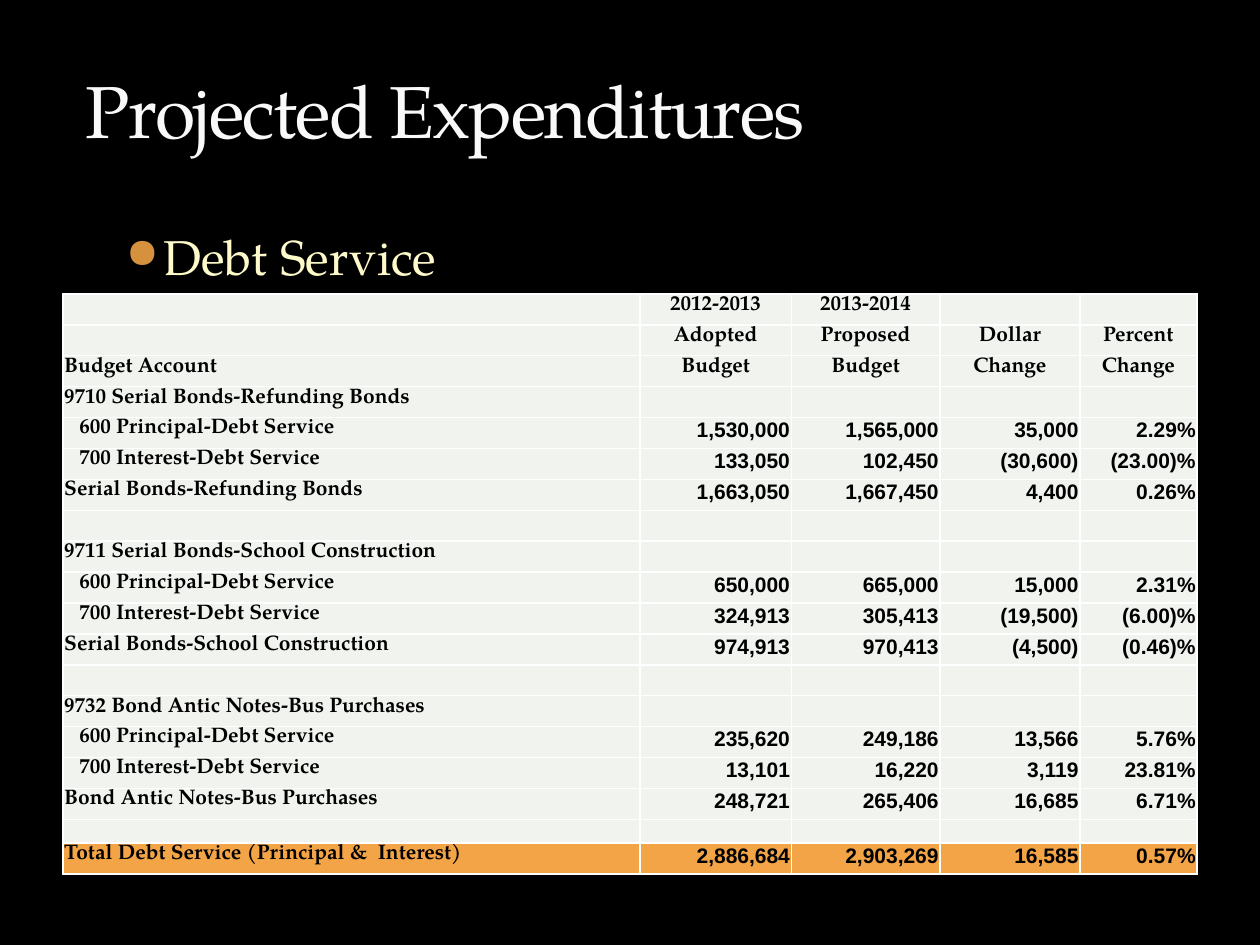
from lxml import etree
from pptx import Presentation
from pptx import util as u
from pptx.dml.color import RGBColor
from pptx.enum import text
from pptx.oxml import ns

WIDTH, HEIGHT = u.Inches(10), u.Inches(7.5)
SERIF, SANS = "TeX Gyre Pagella", "Arial"
COLORS = {
    "background": "000000", "title": "F9F9F9", "heading": "FEFAC9",
    "bullet": "D6913F", "cell": "F0F3EE", "total": "F3A447",
    "border": "FFFFFF", "ink": "000000",
}
LEFT, CENTER, RIGHT = (text.PP_ALIGN.LEFT, text.PP_ALIGN.CENTER,
                       text.PP_ALIGN.RIGHT)

COLUMN_WIDTHS = [4.58, 1.2, 1.18, 1.11, 0.93]
TABLE_HEIGHT, SPACER_HEIGHT = 4.61, 0.19
PRINCIPAL, INTEREST = "600 Principal-Debt Service", "700 Interest-Debt Service"

HEADER = [
    ["", "2012-2013", "2013-2014", "", ""],
    ["", "Adopted", "Proposed", "Dollar", "Percent"],
    ["Budget Account", "Budget", "Budget", "Change", "Change"],
]
# Account code, account name, then principal, interest and subtotal figures
ACCOUNTS = [
    ("9710", "Serial Bonds-Refunding Bonds",
     ["1,530,000", "1,565,000", "35,000", "2.29%"],
     ["133,050", "102,450", "(30,600)", "(23.00)%"],
     ["1,663,050", "1,667,450", "4,400", "0.26%"]),
    ("9711", "Serial Bonds-School Construction",
     ["650,000", "665,000", "15,000", "2.31%"],
     ["324,913", "305,413", "(19,500)", "(6.00)%"],
     ["974,913", "970,413", "(4,500)", "(0.46)%"]),
    ("9732", "Bond Antic Notes-Bus Purchases",
     ["235,620", "249,186", "13,566", "5.76%"],
     ["13,101", "16,220", "3,119", "23.81%"],
     ["248,721", "265,406", "16,685", "6.71%"]),
]
TOTAL = ["Total Debt Service (Principal &  Interest)",
         "2,886,684", "2,903,269", "16,585", "0.57%"]


def rgb(name):
    return RGBColor.from_string(COLORS[name])


def add_child(parent, tag, **attributes):
    child = etree.SubElement(parent, ns.qn(tag))
    for key, value in attributes.items():
        child.set(key, str(value))
    return child


def write(paragraph, words, size=12, font=SERIF, color="ink", bold=False,
          align=LEFT, spacing=0, indent=0, hanging=0):
    """Put formatted words in a paragraph; indents are in inches."""
    paragraph.alignment = align
    properties = paragraph._p.get_or_add_pPr()
    properties.set("marL", str(u.Inches(indent)))
    properties.set("indent", str(-u.Inches(hanging)))
    run = paragraph.add_run()
    run.text = words
    run.font.size, run.font.name, run.font.bold = u.Pt(size), font, bold
    run.font.color.rgb = rgb(color)
    if spacing:
        run._r.get_or_add_rPr().set("spc", str(spacing * 100))


def add_bullet(paragraph, character, color, percent):
    properties = paragraph._p.get_or_add_pPr()
    add_child(add_child(properties, "a:buClr"), "a:srgbClr", val=COLORS[color])
    add_child(properties, "a:buSzPct", val=percent * 1000)
    add_child(properties, "a:buChar", char=character)


def add_text_box(slide, left, top, width, height, anchor):
    """Add a wrapping box placed by shares of the slide's size."""
    shape = slide.shapes.add_textbox(
        int(WIDTH * left), int(HEIGHT * top),
        int(WIDTH * width), int(HEIGHT * height))
    shape.text_frame.word_wrap = True
    shape.text_frame.vertical_anchor = anchor
    return shape.text_frame.paragraphs[0]


def format_cell(cell, fill):
    cell.margin_left = cell.margin_right = cell.margin_top = u.Inches(0.01)
    cell.margin_bottom = 0
    properties = cell._tc.get_or_add_tcPr()
    for side in ("a:lnL", "a:lnR", "a:lnT", "a:lnB"):
        line = add_child(properties, side, w=u.Pt(1))
        add_child(add_child(line, "a:solidFill"), "a:srgbClr",
                  val=COLORS["border"])
    cell.fill.solid()
    cell.fill.fore_color.rgb = rgb(fill)


def fill_cell(cell, words, **style):
    paragraph = cell.text_frame.paragraphs[0]
    if words:
        write(paragraph, words, bold=True, **style)
    else:
        # A small end mark keeps empty rows from growing
        add_child(paragraph._p, "a:endParaRPr", sz=800)


def table_rows():
    blank = [""] * 4
    rows = list(HEADER)
    for code, name, principal, interest, subtotal in ACCOUNTS:
        rows += [[f"{code} {name}"] + blank, [PRINCIPAL] + principal,
                 [INTEREST] + interest, [name] + subtotal, [""] + blank]
    return rows + [TOTAL]


def add_budget_table(slide, left, top):
    rows = table_rows()
    table = slide.shapes.add_table(
        len(rows), len(COLUMN_WIDTHS), int(WIDTH * left), int(HEIGHT * top),
        u.Inches(sum(COLUMN_WIDTHS)), u.Inches(TABLE_HEIGHT)).table
    table.first_row = table.horz_banding = False
    for column, width in zip(table.columns, COLUMN_WIDTHS):
        column.width = u.Inches(width)

    # Equal rows, with a shorter spacer above the total
    row_height = (TABLE_HEIGHT - SPACER_HEIGHT) / (len(rows) - 1)
    for row in table.rows:
        row.height = u.Inches(row_height)
    table.rows[len(rows) - 2].height = u.Inches(SPACER_HEIGHT)

    for r, values in enumerate(rows):
        fill = "total" if values is TOTAL else "cell"
        for c, words in enumerate(values):
            cell = table.cell(r, c)
            format_cell(cell, fill)
            if c == 0:
                detail = words in (PRINCIPAL, INTEREST)
                fill_cell(cell, words, indent=0.12 if detail else 0)
            elif r < len(HEADER):
                fill_cell(cell, words, align=CENTER)
            else:
                fill_cell(cell, words, font=SANS, align=RIGHT)


def main():
    presentation = Presentation()
    presentation.slide_width, presentation.slide_height = WIDTH, HEIGHT
    slide = presentation.slides.add_slide(presentation.slide_layouts[6])
    slide.background.fill.solid()
    slide.background.fill.fore_color.rgb = rgb("background")

    # Section heading
    heading = add_text_box(slide, 0.05, 0.233, 0.9, 0.077,
                           text.MSO_ANCHOR.TOP)
    heading.space_before = u.Pt(3)
    write(heading, "Debt Service", size=28, color="heading",
          indent=0.7, hanging=0.3)
    add_bullet(heading, "●", "bullet", 85)

    # Title
    title = add_text_box(slide, 0.058, 0.056, 0.9, 0.113,
                         text.MSO_ANCHOR.BOTTOM)
    write(title, "Projected Expenditures", size=42, color="title", spacing=-1)

    # Debt service figures
    add_budget_table(slide, 0.05, 0.311)
    presentation.save("out.pptx")


if __name__ == "__main__":
    main()
